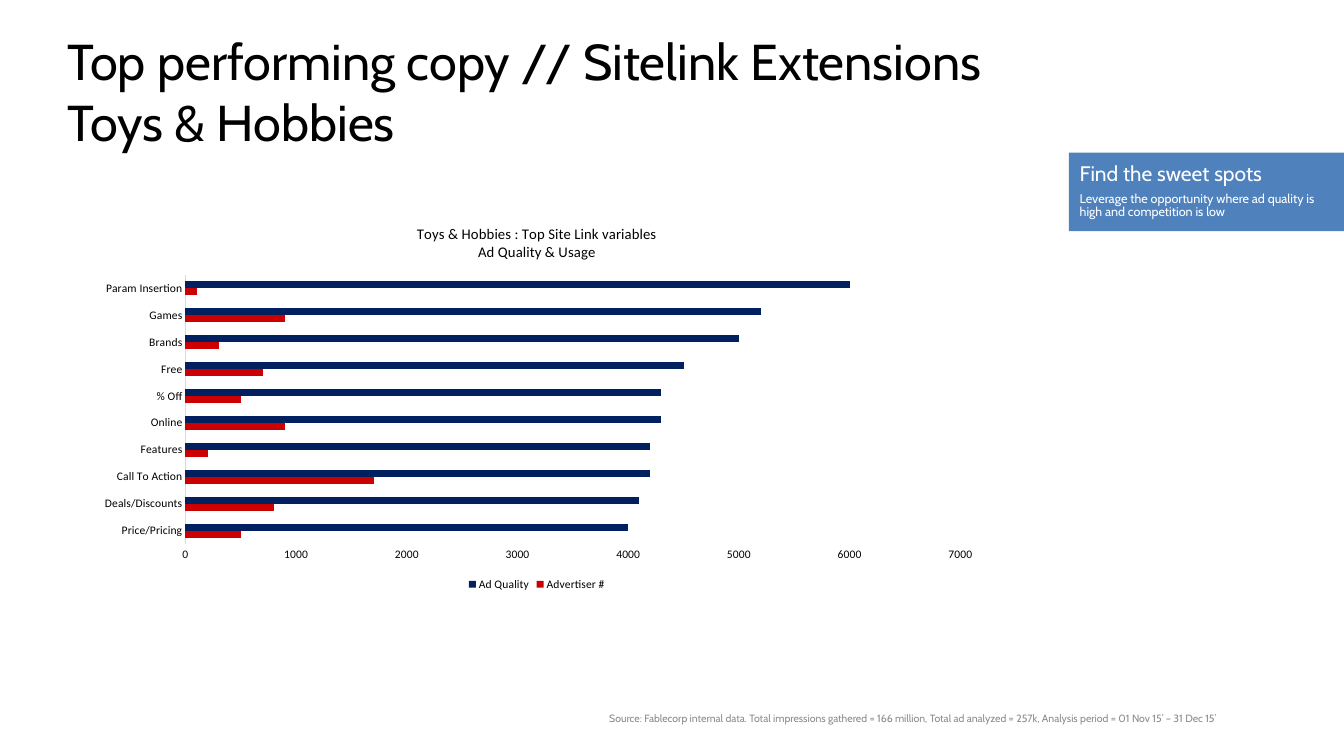
from dataclasses import dataclass

from lxml import etree
from pptx import Presentation
from pptx.chart.data import CategoryChartData
from pptx.dml.color import RGBColor
from pptx.enum.chart import XL_CHART_TYPE, XL_LEGEND_POSITION, XL_TICK_MARK
from pptx.enum.shapes import MSO_SHAPE
from pptx.enum.text import MSO_ANCHOR, PP_ALIGN
from pptx.util import Cm, Pt

BAR = XL_CHART_TYPE.BAR_CLUSTERED
LEGEND_BOTTOM = XL_LEGEND_POSITION.BOTTOM
NO_TICK = XL_TICK_MARK.NONE
RECTANGLE = MSO_SHAPE.RECTANGLE
TOP = MSO_ANCHOR.TOP
LEFT = PP_ALIGN.LEFT
SLIDE_WIDTH, SLIDE_HEIGHT = 45.16, 25.4

HEADLINE = "Top performing copy // Sitelink Extensions\vToys & Hobbies"
SOURCE_NOTE = (
    "Source: Fablecorp internal data. Total impressions gathered = 166 million, "
    "Total ad analyzed = 257k, Analysis period = 01 Nov 15’ – 31 Dec 15’"
)
CHART_TITLE = "Toys & Hobbies : Top Site Link variables\vAd Quality & Usage"
# variable: (advertiser count, ad quality), from the bottom bar up
SITE_LINKS = {
    "Price/Pricing": (500, 4000),
    "Deals/Discounts": (800, 4100),
    "Call To Action": (1700, 4200),
    "Features": (200, 4200),
    "Online": (900, 4300),
    "% Off": (500, 4300),
    "Free": (700, 4500),
    "Brands": (300, 5000),
    "Games": (900, 5200),
    "Param Insertion": (100, 6000),
}


@dataclass(frozen=True)
class Theme:
    text_font: str = "Cabin"
    chart_font: str = "Calibri"
    black: str = "000000"
    white: str = "FFFFFF"
    grey: str = "8C8C8C"
    axis: str = "D9D9D9"
    callout: str = "4F81BD"
    advertisers: str = "CC0000"
    quality: str = "002060"
    headline_size: int = 48
    callout_size: int = 20
    chart_title_size: int = 14
    body_size: int = 12
    label_size: int = 11
    note_size: int = 10


def rgb(color):
    return RGBColor.from_string(color)


def apply(target, formats):
    for name, value in formats.items():
        setattr(target, name, value)


def style_font(font, name, size, color):
    apply(font, {"name": name, "size": Pt(size), "bold": False})
    font.color.rgb = rgb(color)


def place_plot(chart, **fractions):
    """Fix the inner plot area, in fractions of the chart's size."""
    plot_area = chart.plots[0]._element.getparent()
    uri = etree.QName(plot_area).namespace
    for old in plot_area.findall(f"{{{uri}}}layout"):
        plot_area.remove(old)
    layout = etree.Element(f"{{{uri}}}layout")
    manual = etree.SubElement(layout, f"{{{uri}}}manualLayout")
    settings = {"layoutTarget": "inner", "xMode": "edge", "yMode": "edge", **fractions}
    for tag, value in settings.items():
        etree.SubElement(manual, f"{{{uri}}}{tag}").set("val", str(value))
    plot_area.insert(0, layout)


class SlideBuilder:
    def __init__(self, slide, theme):
        self.slide = slide
        self.theme = theme

    def fill_frame(self, frame, lines, margins=(0, 0, 0, 0), **paragraph_format):
        """Fill a text frame with (text, size, color) lines."""
        left, top, right, bottom = map(Cm, margins)
        apply(frame, {
            "word_wrap": True, "vertical_anchor": TOP,
            "margin_left": left, "margin_top": top,
            "margin_right": right, "margin_bottom": bottom,
        })
        for index, (text, size, color) in enumerate(lines):
            paragraph = frame.add_paragraph() if index else frame.paragraphs[0]
            paragraph.text = text
            apply(paragraph, {"alignment": LEFT, **paragraph_format})
            for run in paragraph.runs:
                style_font(run.font, self.theme.text_font, size, color)

    def text(self, box, *line):
        frame = self.slide.shapes.add_textbox(*map(Cm, box)).text_frame
        self.fill_frame(frame, [line])

    def callout(self, box, heading, advice):
        theme = self.theme
        panel = self.slide.shapes.add_shape(RECTANGLE, *map(Cm, box))
        panel.shadow.inherit = False
        panel.fill.solid()
        panel.fill.fore_color.rgb = rgb(theme.callout)
        panel.line.fill.background()
        lines = [(heading, theme.callout_size, theme.white),
                 (advice, theme.body_size, theme.white)]
        self.fill_frame(panel.text_frame, lines, (0.36, 0.36, 0.25, 0.25),
                        line_spacing=0.9, space_after=Pt(6))

    def bar_chart(self, box, title, categories, series):
        """Draw clustered bars; series holds (name, values, color)."""
        theme = self.theme
        data = CategoryChartData(number_format="0")
        data.categories = categories
        for name, values, _ in series:
            data.add_series(name, values)
        chart = self.slide.shapes.add_chart(BAR, *map(Cm, box), data).chart
        style_font(chart.font, theme.chart_font, theme.note_size, theme.black)

        heading = chart.chart_title.text_frame
        heading.text = title
        for run in heading.paragraphs[0].runs:
            style_font(run.font, theme.chart_font, theme.chart_title_size, theme.black)

        plot = chart.plots[0]
        apply(plot, {"gap_width": 182, "overlap": 0, "vary_by_categories": False})
        for bars, (_, _, color) in zip(plot.series, series):
            bars.format.fill.solid()
            bars.format.fill.fore_color.rgb = rgb(color)

        for axis in (chart.category_axis, chart.value_axis):
            apply(axis, {"major_tick_mark": NO_TICK, "minor_tick_mark": NO_TICK,
                         "has_major_gridlines": False})
            style_font(axis.tick_labels.font, theme.chart_font, theme.label_size, theme.black)
        chart.category_axis.format.line.color.rgb = rgb(theme.axis)
        chart.category_axis.format.line.width = Pt(0.75)
        chart.value_axis.format.line.fill.background()
        apply(chart.value_axis,
              {"minimum_scale": 0, "maximum_scale": 7000, "major_unit": 1000})

        chart.has_legend = True
        apply(chart.legend, {"position": LEGEND_BOTTOM, "include_in_layout": False})
        style_font(chart.legend.font, theme.chart_font, theme.label_size, theme.black)
        place_plot(chart, x=0.11, y=0.17, w=0.86, h=0.7)


def main():
    presentation = Presentation()
    apply(presentation, {"slide_width": Cm(SLIDE_WIDTH), "slide_height": Cm(SLIDE_HEIGHT)})
    theme = Theme()
    builder = SlideBuilder(
        presentation.slides.add_slide(presentation.slide_layouts[6]), theme)

    builder.text((2.26, 1.02, 40.64, 4.11), HEADLINE, theme.headline_size, theme.black)
    builder.text((20.47, 23.93, 22.43, 0.64), SOURCE_NOTE, theme.note_size, theme.grey)
    builder.callout((35.92, 5.13, SLIDE_WIDTH - 35.92, 2.64), "Find the sweet spots",
                    "Leverage the opportunity where ad quality is high and competition is low")
    advertisers, quality = zip(*SITE_LINKS.values())
    builder.bar_chart((2.9, 7.04, 30.28, 12.93), CHART_TITLE, list(SITE_LINKS), [
        ("Advertiser #", advertisers, theme.advertisers),
        ("Ad Quality", quality, theme.quality),
    ])
    presentation.save("out.pptx")


if __name__ == "__main__":
    main()
